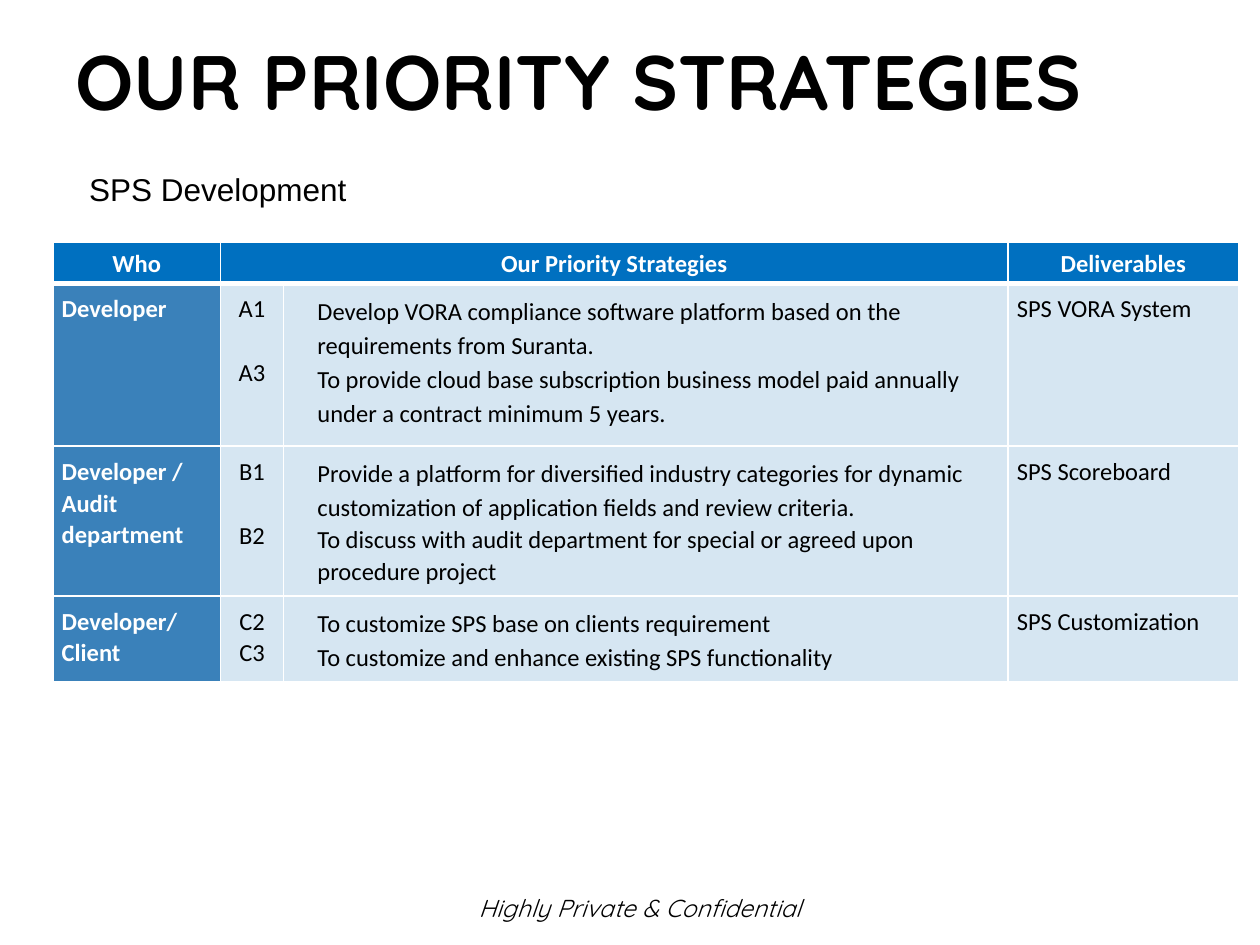
"""Build the priority strategies slide."""
from lxml import etree
from pptx import Presentation
from pptx import util as u
from pptx.dml.color import RGBColor
from pptx.enum import text
from pptx.oxml import ns

BLACK = RGBColor(0, 0, 0)
WHITE = RGBColor(255, 255, 255)
HEADER_BLUE = RGBColor(0x00, 0x70, 0xC0)
SIDE_BLUE = RGBColor(0x3A, 0x81, 0xBA)
PALE_BLUE = RGBColor(0xD6, 0xE6, 0xF2)
MIDDLE = text.MSO_ANCHOR.MIDDLE
TOP = text.MSO_ANCHOR.TOP
CENTER = text.PP_ALIGN.CENTER
LEFT = text.PP_ALIGN.LEFT

COLUMNS = (1.33, 0.5, 5.75, 1.83)
ROWS = (0.33, 1.29, 1.19, 0.68)
TIGHT, LOOSE = 1.07, 1.15
CODE_GAP = 18.3
HEADERS = ((0, "Who"), (1, "Our Priority Strategies"), (3, "Deliverables"))
STRATEGIES = (
    ("Developer", ("A1", "A3"), CODE_GAP, (
        ("Develop VORA compliance software platform based on the "
         "requirements from Suranta.", LOOSE),
        ("To provide cloud base subscription business model paid annually "
         "under a contract minimum 5 years.", LOOSE)),
     "SPS VORA System"),
    ("Developer / Audit department", ("B1", "B2"), CODE_GAP, (
        ("Provide a platform for diversified industry categories for dynamic "
         "customization of application fields and review criteria.", LOOSE),
        ("To discuss with audit department for special or agreed upon "
         "procedure project", TIGHT)),
     "SPS Scoreboard"),
    ("Developer/ Client", ("C2", "C3"), 0, (
        ("To customize SPS base on clients requirement", LOOSE),
        ("To customize and enhance existing SPS functionality", LOOSE)),
     "SPS Customization"),
)


def add_run(para, words, font, size, color, bold=False, italic=False):
    """Append one formatted run to a paragraph."""
    span = para.add_run()
    span.text = words
    span.font.name = font
    span.font.size = u.Pt(size)
    span.font.color.rgb = color
    span.font.bold = bold
    span.font.italic = italic


def add_label(page, place, words, font, size, anchor=MIDDLE, align=LEFT,
              wrap=True, inset=0.1, **style):
    """Add a one-line text box."""
    box = page.shapes.add_textbox(*(u.Inches(length) for length in place))
    frame = box.text_frame
    frame.word_wrap = wrap
    frame.vertical_anchor = anchor
    frame.margin_left = frame.margin_right = u.Inches(0.1)
    frame.margin_top = frame.margin_bottom = u.Inches(inset)
    para = frame.paragraphs[0]
    para.alignment = align
    add_run(para, words, font, size, BLACK, **style)


def add_borders(cell, bottom):
    """Draw white lines on the four sides of a cell."""
    properties = cell._tc.get_or_add_tcPr()
    sides = (("lnL", 1), ("lnR", 1), ("lnT", 1), ("lnB", bottom))
    for index, (side, width) in enumerate(sides):
        line = etree.Element(ns.qn(f"a:{side}"), w=str(u.Pt(width)))
        fill = etree.SubElement(line, ns.qn("a:solidFill"))
        etree.SubElement(fill, ns.qn("a:srgbClr"), val=str(WHITE))
        properties.insert(index, line)


def style_cell(cell, fill, side=0.07, ends=0.07, anchor=TOP, bottom=1):
    """Set the fill, margins, anchor and borders of a cell."""
    cell.fill.solid()
    cell.fill.fore_color.rgb = fill
    cell.margin_left = cell.margin_right = u.Inches(side)
    cell.margin_top = cell.margin_bottom = u.Inches(ends)
    cell.vertical_anchor = anchor
    add_borders(cell, bottom)


def write_cell(cell, lines, color=BLACK, bold=False, align=LEFT, indent=0, gap=0):
    """Write (words, line spacing) pairs as the paragraphs of a cell."""
    frame = cell.text_frame
    for index, (words, spacing) in enumerate(lines):
        para = frame.add_paragraph() if index else frame.paragraphs[0]
        para.alignment = align
        para.line_spacing = spacing
        if index and gap:
            para.space_before = u.Pt(gap)
        if indent:
            para._p.get_or_add_pPr().set("marL", str(u.Inches(indent)))
        add_run(para, words, "Calibri", 14, color, bold)


def add_strategy_table(page):
    """Add the table of owners, strategies and deliverables."""
    frame = page.shapes.add_table(
        len(ROWS), len(COLUMNS), u.Inches(0.42), u.Inches(1.92),
        u.Inches(sum(COLUMNS)), u.Inches(sum(ROWS)))
    table = frame.table
    for column, width in zip(table.columns, COLUMNS):
        column.width = u.Inches(width)
    for row, height in zip(table.rows, ROWS):
        row.height = u.Inches(height)
    for cell in table.rows[0].cells:
        style_cell(cell, HEADER_BLUE, 0.04, 0, MIDDLE, 3)
    table.cell(0, 1).merge(table.cell(0, 2))
    for column, words in HEADERS:
        write_cell(table.cell(0, column), [(words, TIGHT)], WHITE, True, CENTER)
    for row, strategy in enumerate(STRATEGIES, 1):
        owner, codes, gap, actions, deliverable = strategy
        cells = list(table.rows[row].cells)
        for column, cell in enumerate(cells):
            style_cell(cell, PALE_BLUE if column else SIDE_BLUE)
        write_cell(cells[0], [(owner, TIGHT)], WHITE, True)
        write_cell(cells[1], [(code, TIGHT) for code in codes],
                   align=CENTER, gap=gap)
        write_cell(cells[2], actions, indent=0.2)
        write_cell(cells[3], [(deliverable, TIGHT)])


def main():
    """Build and save the deck."""
    deck = Presentation()
    deck.slide_width, deck.slide_height = u.Inches(10), u.Inches(7.5)
    page = deck.slides.add_slide(deck.slide_layouts[6])
    add_label(page, (3.7, 7.09, 3.37, 0.23), "Highly Private & Confidential",
              "Quicksand", 14, italic=True)
    add_label(page, (0.17, 0.23, 8.85, 0.8), "OUR PRIORITY STRATEGIES",
              "Quicksand", 44, align=CENTER, bold=True)
    add_strategy_table(page)
    add_label(page, (0.61, 1.3, 2.26, 0.4), "SPS Development",
              "Arial", 18, anchor=TOP, wrap=False, inset=0.05)
    deck.save("out.pptx")


if __name__ == "__main__":
    main()
